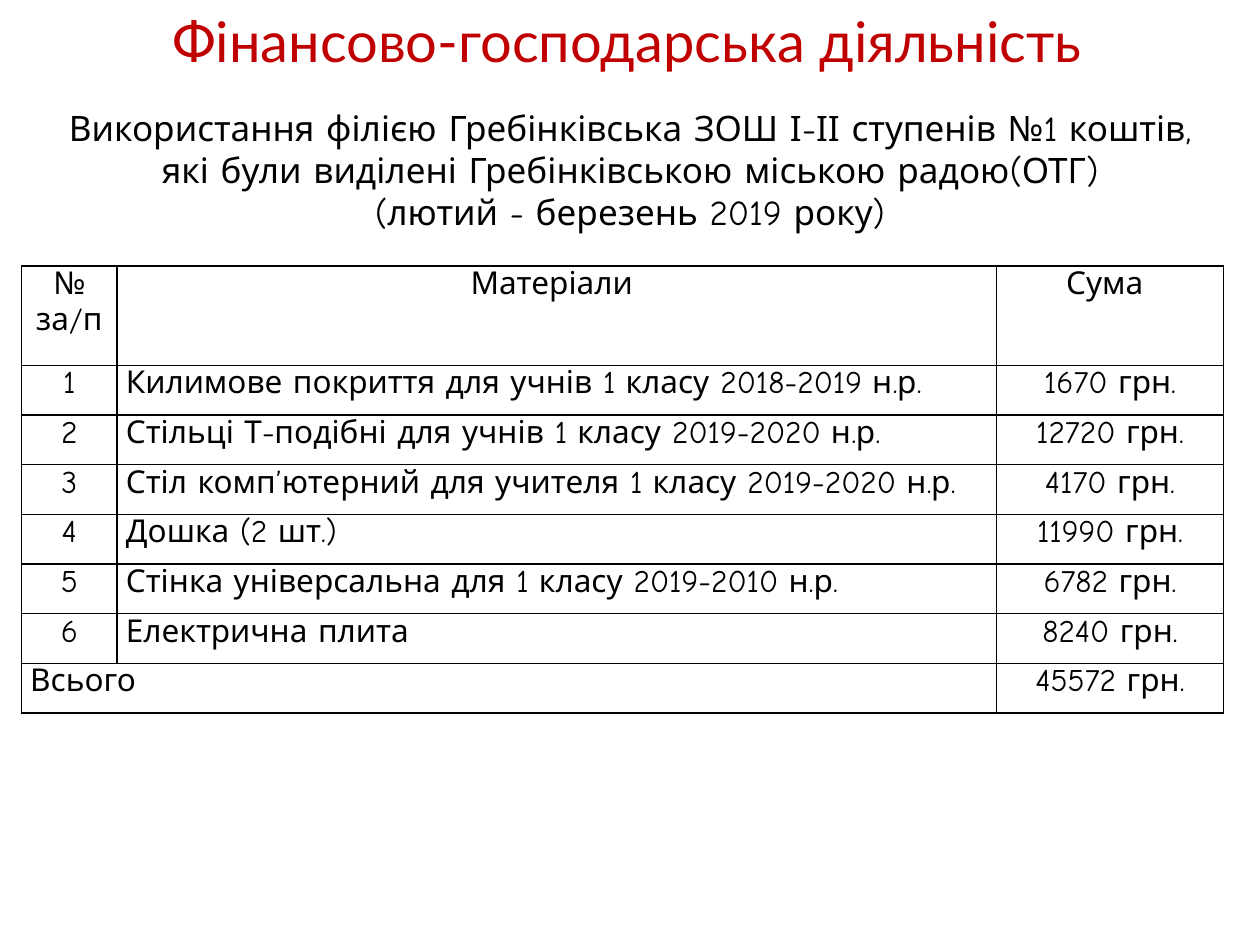
import pptx
import pptx.util
import pptx.dml.color
import pptx.enum.text
import pptx.oxml
import pptx.oxml.ns
from dataclasses import dataclass

Inches, Pt = pptx.util.Inches, pptx.util.Pt
RGB = pptx.dml.color.RGBColor
ALIGN = pptx.enum.text.PP_ALIGN
ANCHOR = pptx.enum.text.MSO_ANCHOR


@dataclass(frozen=True)
class Theme:
    title_color: str = "C00000"
    ink: str = "000000"
    title_font: str = "Lato"
    body_font: str = "Comic Neue"
    title_size: int = 32
    body_size: int = 20
    table_size: int = 18
    border: int = 1


THEME = Theme()

TITLE = "Фінансово-господарська діяльність"
SUBTITLE = [
    "Використання філією Гребінківська ЗОШ І-ІІ ступенів №1 коштів,",
    "які були виділені Гребінківською міською радою(ОТГ)",
    "(лютий - березень 2019 року)",
]
HEADER = ("№ за/п", "Матеріали ", "Сума ")
MATERIALS = [
    ("Килимове покриття для учнів 1 класу 2018-2019 н.р.", 1670),
    ("Стільці Т-подібні для учнів 1 класу 2019-2020 н.р.", 12720),
    ("Стіл комп’ютерний для учителя 1 класу 2019-2020 н.р.", 4170),
    ("Дошка (2 шт.)", 11990),
    ("Стінка універсальна для 1 класу 2019-2010 н.р.", 6782),
    ("Електрична плита", 8240),
]


def apply(obj, values):
    for name, value in values.items():
        setattr(obj, name, value)


def place(sp, box):
    names = ("left", "top", "width", "height")
    apply(sp, dict(zip(names, map(Inches, box))))


def write(tf, lines, font, size, color, align=ALIGN.CENTER):
    for i, line in enumerate(lines):
        p = tf.add_paragraph() if i else tf.paragraphs[0]
        apply(p, {"alignment": align, "space_before": Pt(0)})
        r = p.add_run()
        r.text = line
        apply(r.font, {"name": font, "size": Pt(size), "bold": False})
        r.font.color.rgb = RGB.from_string(color)


def fill_placeholder(sp, box, lines, anchor, font, size, color):
    place(sp, box)
    tf = sp.text_frame
    write(tf, lines, font, size, color)
    apply(tf, {"word_wrap": True, "vertical_anchor": anchor,
               "auto_size": pptx.enum.text.MSO_AUTO_SIZE.SHAPE_TO_FIT_TEXT})


def add_title(s, box):
    fill_placeholder(s.shapes.title, box, [TITLE], ANCHOR.TOP,
                     THEME.title_font, THEME.title_size, THEME.title_color)


def add_subtitle(s, box):
    fill_placeholder(s.placeholders[1], box, SUBTITLE, ANCHOR.MIDDLE,
                     THEME.body_font, THEME.body_size, THEME.ink)


def set_borders(cell):
    tc_pr = cell._tc.get_or_add_tcPr()
    for i, side in enumerate(("lnL", "lnR", "lnT", "lnB")):
        tc_pr.insert(i, pptx.oxml.parse_xml(
            f'<a:{side} {pptx.oxml.ns.nsdecls("a")} w="{Pt(THEME.border)}">'
            f'<a:solidFill><a:srgbClr val="{THEME.ink}"/></a:solidFill>'
            f'</a:{side}>'))


def add_materials_table(s, box):
    total = sum(amount for _, amount in MATERIALS)
    rows = [HEADER]
    rows += [(str(n), name, f"{amount} грн.")
             for n, (name, amount) in enumerate(MATERIALS, 1)]
    rows.append(("Всього", "", f"{total} грн."))

    table = s.shapes.add_table(len(rows), len(HEADER), *map(Inches, box)).table
    apply(table, {"first_row": False, "horz_banding": False})
    for col, width in zip(table.columns, (0.76, 6.98, 1.8)):
        col.width = Inches(width)
    header_height = 0.79
    row_height = (box[3] - header_height) / (len(rows) - 1)
    for i, row in enumerate(table.rows):
        row.height = Inches(row_height if i else header_height)

    last = len(rows) - 1
    table.cell(last, 0).merge(table.cell(last, 1))
    for i, row in enumerate(rows):
        for j, text in enumerate(row):
            cell = table.cell(i, j)
            apply(cell, {"margin_left": Inches(0.07), "margin_right": Inches(0.07),
                         "margin_top": 0, "margin_bottom": 0})
            cell.fill.background()
            set_borders(cell)
            if cell.is_spanned:
                continue
            justified = (j == 1 and i > 0) or (j == 0 and i == last)
            write(cell.text_frame, [text], THEME.body_font, THEME.table_size,
                  THEME.ink, ALIGN.JUSTIFY if justified else ALIGN.CENTER)


def main():
    prs = pptx.Presentation()
    apply(prs, {"slide_width": Inches(10), "slide_height": Inches(7.5)})
    s = prs.slides.add_slide(prs.slide_layouts[0])
    add_title(s, (0.17, 0, 9.62, 0.64))
    add_subtitle(s, (0, 0.79, 10, 1.11))
    add_materials_table(s, (0.17, 2.11, 9.54, 3.55))
    prs.save("out.pptx")


if __name__ == "__main__":
    main()
